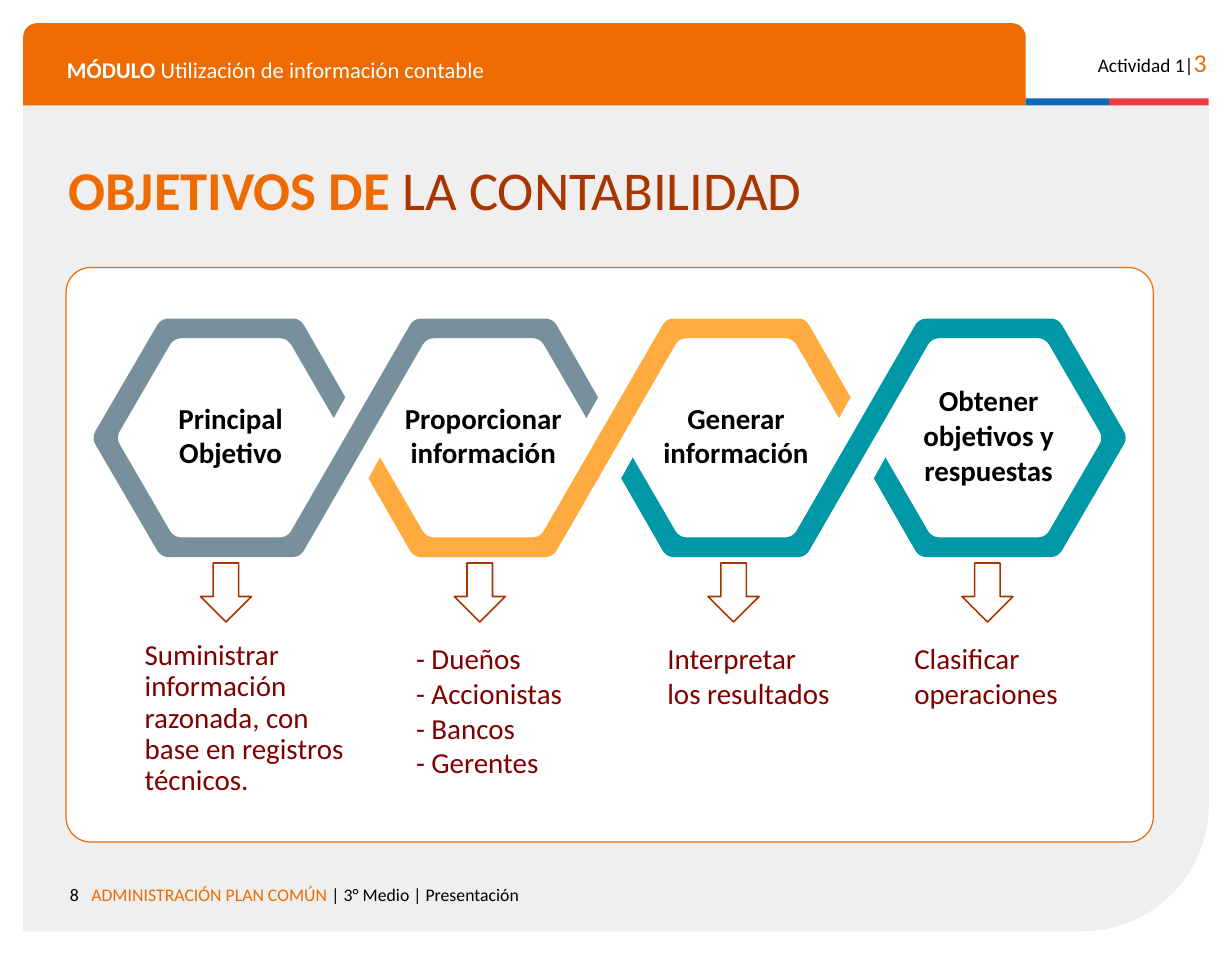
from math import hypot

from pptx import Presentation
from pptx.dml.color import RGBColor
from pptx.enum.shapes import MSO_SHAPE
from pptx.enum.text import MSO_ANCHOR, MSO_AUTO_SIZE, PP_ALIGN
from pptx.util import Emu, Pt

PX = 9144  # one hundredth of an inch
FONT = "Calibri"
WHITE = RGBColor(0xFF, 0xFF, 0xFF)
BLACK = RGBColor(0x00, 0x00, 0x00)
PANEL = RGBColor(0xEF, 0xEF, 0xEF)
ORANGE = RGBColor(0xED, 0x6B, 0x00)
RUST = RGBColor(0xA9, 0x35, 0x01)
MAROON = RGBColor(0x80, 0x00, 0x00)
BLUE = RGBColor(0x0F, 0x69, 0xB4)
RED = RGBColor(0xEB, 0x3C, 0x46)
SLATE = RGBColor(0x78, 0x90, 0x9C)
AMBER = RGBColor(0xFF, 0xAB, 0x40)
TEAL = RGBColor(0x00, 0x97, 0xA7)

# Right-hand end of a ribbon, relative to its hexagon's centre.
# The left-hand end is the same outline turned by half a turn.
OPEN_END = [(-60, -103), (60, -103), (99, -35),
            (89, -17), (49, -86), (-49, -86)]
LOOP_END = [(-60, -103), (60, -103), (120, 0), (60, 103), (-60, 103), (-99, 35),
            (-89, 17), (-49, 86), (49, 86), (99, 0), (49, -86), (-49, -86)]
SHARP = {(99, 35), (89, 17)}
CORNER = 7
HEX_PITCH = 218
ARROW_PITCH = 219

LABELS = [["Principal", "Objetivo"], ["Proporcionar", "información"],
          ["Generar", "información"], ["Obtener objetivos y", "respuestas"]]
OWNERS = ["- Dueños", "- Accionistas", "- Bancos", "- Gerentes"]


def emu(box):
    return [Emu(v * PX) for v in box]


def place(sp, box):
    sp.left, sp.top, sp.width, sp.height = emu(box)
    sp.element.getparent().append(sp.element)  # bring to front
    return sp


def paint(sp, fill, line=None, width=1):
    sp.shadow.inherit = False
    sp.fill.solid()
    sp.fill.fore_color.rgb = fill
    if line is None:
        sp.line.fill.background()
    else:
        sp.line.color.rgb = line
        sp.line.width = Pt(width)
    return sp


def add_shape(slide, kind, box, fill, line=None, width=1, adj=()):
    sp = slide.shapes.add_shape(kind, *emu(box))
    for i, value in enumerate(adj):
        sp.adjustments[i] = value
    return paint(sp, fill, line, width)


def write(sp, paragraphs, size=18, color=BLACK, bold=False, align=PP_ALIGN.LEFT,
          anchor=MSO_ANCHOR.TOP, inset=10, spacing=1.0):
    """Fill sp; a paragraph is a string or a list of (text, format) runs."""
    tf = sp.text_frame
    tf.word_wrap = True
    tf.auto_size = MSO_AUTO_SIZE.NONE
    tf.vertical_anchor = anchor
    tf.margin_left = tf.margin_right = Emu(10 * PX)
    tf.margin_top = tf.margin_bottom = Emu(inset * PX)
    for i, runs in enumerate(paragraphs):
        p = tf.add_paragraph() if i else tf.paragraphs[0]
        p.alignment = align
        p.line_spacing = spacing
        p.space_before = p.space_after = Pt(0)
        for text, fmt in [(runs, {})] if isinstance(runs, str) else runs:
            r = p.add_run()
            r.text = text
            r.font.name = FONT
            r.font.size = Pt(fmt.get("size", size))
            r.font.bold = fmt.get("bold", bold)
            r.font.color.rgb = fmt.get("color", color)


def add_text(slide, box, paragraphs, **fmt):
    write(slide.shapes.add_textbox(*emu(box)), paragraphs, **fmt)


def remove_bullets(sp):
    for p in sp.text_frame.paragraphs:
        pPr = p._p.get_or_add_pPr()
        pPr.set("marL", "0")
        pPr.set("indent", "0")
        bullet = pPr.makeelement(
            "{http://schemas.openxmlformats.org/drawingml/2006/main}buNone", {})
        pPr.append(bullet)


def round_corner(before, corner, after, steps=6):
    """Points of a curve that replaces a corner."""
    def toward(end):
        t = CORNER / hypot(end[0] - corner[0], end[1] - corner[1])
        return [c + (e - c) * t for c, e in zip(corner, end)]

    a, b = toward(before), toward(after)
    for i in range(steps + 1):
        t = i / steps
        yield tuple((1 - t) ** 2 * p + 2 * t * (1 - t) * c + t * t * q
                    for p, c, q in zip(a, corner, b))


def add_ribbon(slide, cx, cy, left_end, right_end, color):
    """Draw a band from the hexagon centred on (cx, cy) to the next one."""
    corners = [(x + HEX_PITCH, y, (abs(x), abs(y)) in SHARP) for x, y in right_end]
    corners += [(-x, -y, (abs(x), abs(y)) in SHARP) for x, y in left_end]
    points = []
    for i, (x, y, sharp) in enumerate(corners):
        before, after = corners[i - 1][:2], corners[(i + 1) % len(corners)][:2]
        points += [(x, y)] if sharp else round_corner(before, (x, y), after)
    points = [(round((cx + x) * PX), round((cy + y) * PX)) for x, y in points]
    builder = slide.shapes.build_freeform(*points[0])
    builder.add_line_segments(points[1:], close=True)
    paint(builder.convert_to_shape(), color)


def add_frame(slide, box):
    x, y, w, h = box
    panel = add_shape(slide, MSO_SHAPE.ROUND_1_RECTANGLE, (x, y + 70, w, h - 70),
                      PANEL, adj=[0.153])
    panel.element.spPr.xfrm.set("flipV", "1")
    add_shape(slide, MSO_SHAPE.ROUND_2_SAME_RECTANGLE, (x, y, 865, 71),
              ORANGE, adj=[0.167, 0])
    add_shape(slide, MSO_SHAPE.RECTANGLE, (x + 865, y + 65, 72, 6), BLUE)
    add_shape(slide, MSO_SHAPE.RECTANGLE, (x + 937, y + 65, 86, 6), RED)
    add_text(slide, (x + 28, y + 18, 814, 35),
             [[("MÓDULO ", {"bold": True}), ("Utilización de información contable", {})]],
             size=14, color=WHITE)
    add_text(slide, (x + 903, y + 10, 128, 38),
             [[("Actividad 1|", {}), ("3", {"size": 16, "color": ORANGE})]],
             size=12, align=PP_ALIGN.RIGHT)
    add_text(slide, (x, y + 733, 58, 29), ["8"], size=11, align=PP_ALIGN.RIGHT)
    add_text(slide, (x + 49, y + 733, 714, 38),
             [[("ADMINISTRACIÓN PLAN COMÚN ", {"color": ORANGE}),
               ("| 3° Medio | Presentación", {})]], size=11)


def add_title(slide, box):
    write(place(slide.shapes.title, box),
          [[("OBJETIVOS DE ", {"bold": True}), ("LA CONTABILIDAD", {"color": RUST})]],
          size=34, color=ORANGE, anchor=MSO_ANCHOR.MIDDLE, spacing=0.8)


def add_objectives(slide, box):
    x, y, w, h = box
    add_shape(slide, MSO_SHAPE.ROUNDED_RECTANGLE, box, WHITE, ORANGE, 0.75, [0.043])

    cx, cy = x + 142, y + 147
    ribbons = [(LOOP_END, OPEN_END, SLATE), (OPEN_END, OPEN_END, AMBER),
               (OPEN_END, LOOP_END, TEAL)]
    for i, (left_end, right_end, color) in enumerate(ribbons):
        add_ribbon(slide, cx + i * HEX_PITCH, cy, left_end, right_end, color)

    for i, label in enumerate(LABELS):
        add_text(slide, (cx + i * HEX_PITCH - 86, cy - 53, 172, 101), label,
                 bold=True, align=PP_ALIGN.CENTER, anchor=MSO_ANCHOR.MIDDLE, inset=5)
        add_shape(slide, MSO_SHAPE.DOWN_ARROW,
                  (x + 116 + i * ARROW_PITCH, y + 255, 44, 51), WHITE, RUST)

    top = y + 317
    add_text(slide, (x + 58, top, 209, 147),
             ["Suministrar información razonada, con base en registros técnicos."],
             color=MAROON, inset=5, spacing=0.9)
    owners = place(slide.placeholders[1], (x + 292, top, 151, 131))
    write(owners, OWNERS, color=MAROON, inset=5)
    remove_bullets(owners)
    add_text(slide, (x + 509, top, 191, 71), ["Interpretar", "los resultados"],
             color=MAROON, inset=5)
    add_text(slide, (x + 722, top, 191, 71), ["Clasificar", "operaciones"],
             color=MAROON, inset=5)


def main():
    prs = Presentation()
    prs.slide_width, prs.slide_height = emu((1063, 827))
    slide = prs.slides.add_slide(prs.slide_layouts[1])
    add_frame(slide, (20, 20, 1023, 784))
    add_title(slide, (49, 151, 979, 35))
    add_objectives(slide, (57, 231, 938, 496))
    prs.save("out.pptx")


if __name__ == "__main__":
    main()
